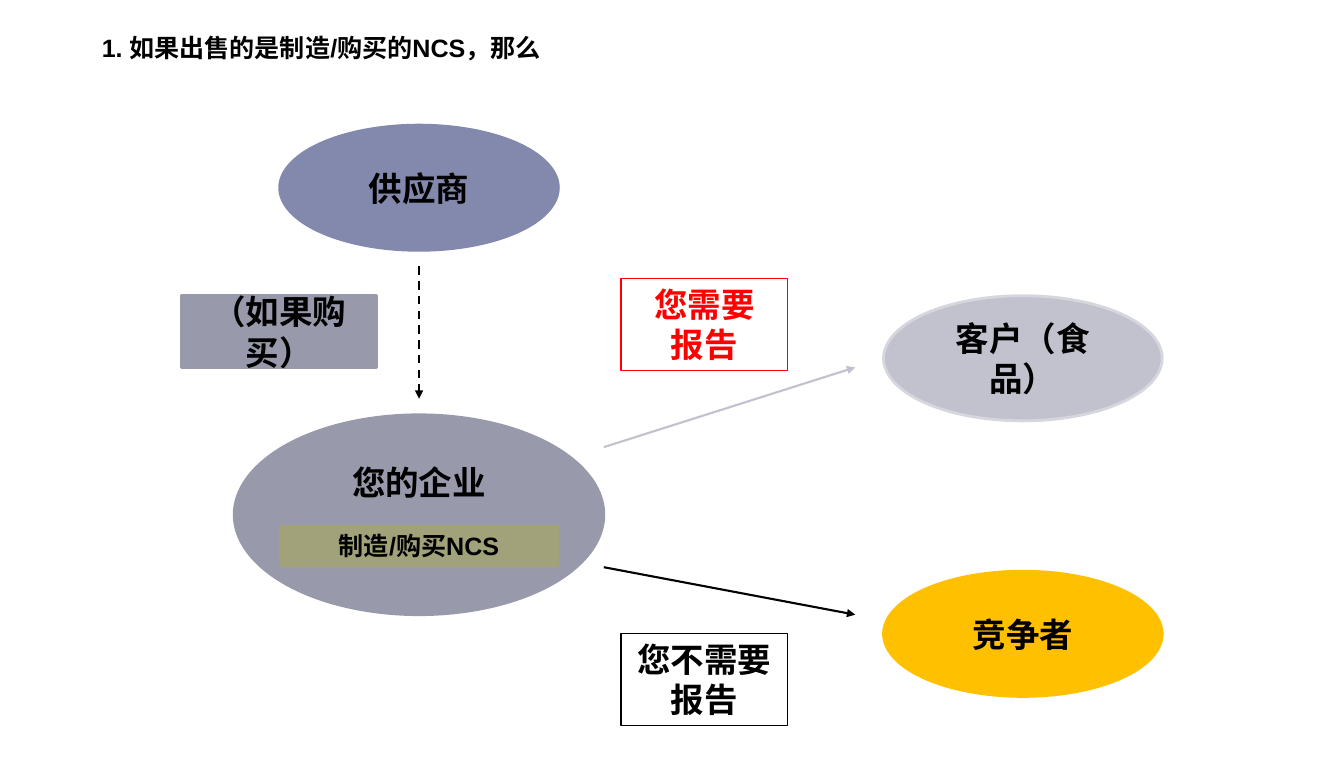
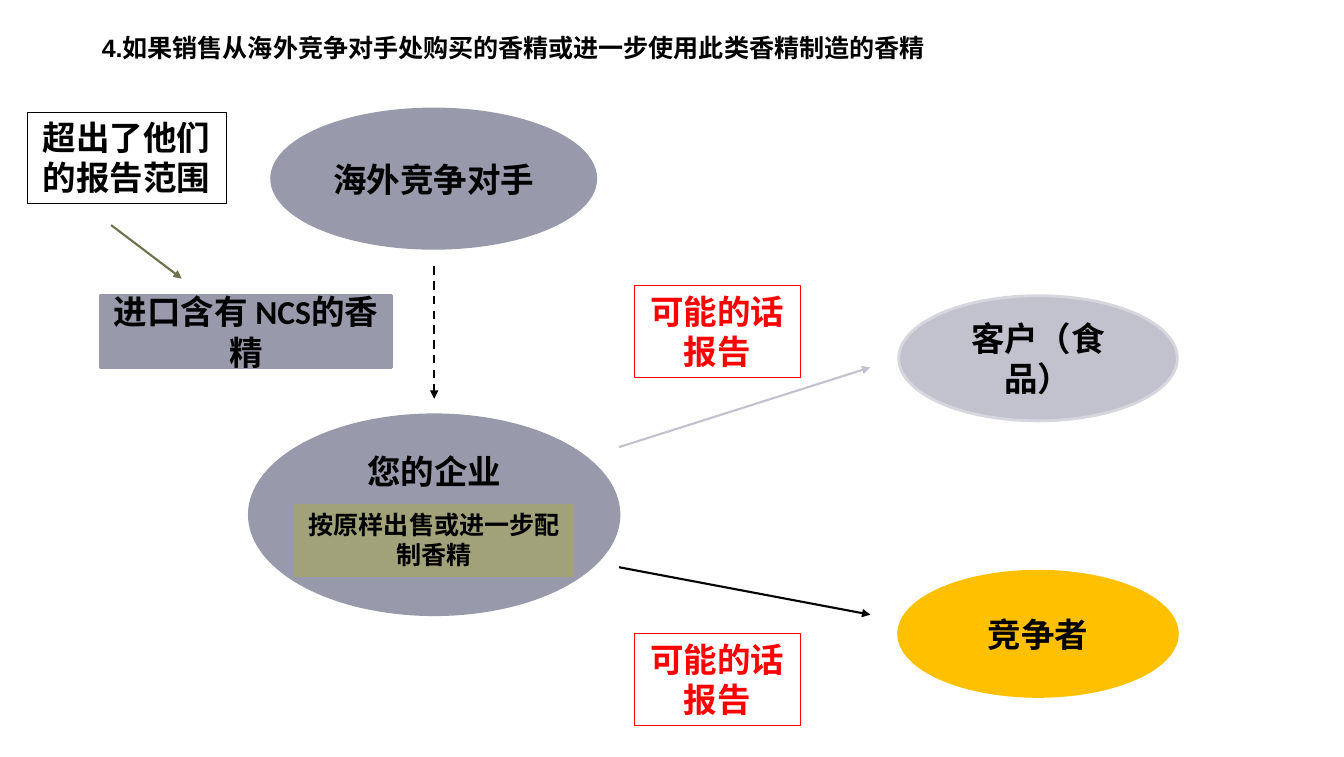
"""Build two flow diagrams showing when sales of NCS flavourings must be reported."""
from pptx import Presentation
from pptx.dml.color import RGBColor
from pptx.enum.dml import MSO_LINE
from pptx.enum.shapes import MSO_CONNECTOR, MSO_SHAPE
from pptx.enum.text import MSO_ANCHOR, PP_ALIGN
from pptx.oxml.ns import qn
from pptx.util import Inches, Pt

ELLIPSE, RECT = MSO_SHAPE.OVAL, MSO_SHAPE.RECTANGLE
STRAIGHT, DASH = MSO_CONNECTOR.STRAIGHT, MSO_LINE.DASH
LEFT, CENTER = PP_ALIGN.LEFT, PP_ALIGN.CENTER
TOP, MIDDLE = MSO_ANCHOR.TOP, MSO_ANCHOR.MIDDLE
BLACK, RED, GOLD = "000000", "FF0000", "FFC000"
BLUE, GREY, PALE, PALE_EDGE = "8389AD", "989AAC", "C1C2CD", "D6D7DE"
OLIVE, DARK_OLIVE = "A1A17A", "6F6F4E"
SMALL, LARGE = 17.9, 23.9


def add_text(s, text, at, shape=None, fill=None, line=None, width=2, size=LARGE,
             color=BLACK, font="Arial", align=CENTER, anchor=MIDDLE):
    """Add a text box, or a preset shape with text."""
    box = [Inches(v) for v in at]
    if shape is None:
        sp = s.shapes.add_textbox(*box)
    else:
        sp = s.shapes.add_shape(shape, *box)
        sp.shadow.inherit = False
        if fill:
            sp.fill.solid()
            sp.fill.fore_color.rgb = RGBColor.from_string(fill)
        else:
            sp.fill.background()
        sp.line.color.rgb = RGBColor.from_string(line or fill)
        sp.line.width = Pt(width)
    tf = sp.text_frame
    tf.word_wrap = True
    tf.vertical_anchor = anchor
    tf.text = text
    for p in tf.paragraphs:
        p.alignment = align
        p.font.name, p.font.size, p.font.bold = font, Pt(size), True
        p.font.color.rgb = RGBColor.from_string(color)


def add_arrow(s, start, end, color=BLACK, dash=None):
    """Add a straight line with a triangle head at its end."""
    line = s.shapes.add_connector(STRAIGHT, *[Inches(v) for v in (*start, *end)])
    line.line.color.rgb = RGBColor.from_string(color)
    line.line.width = Pt(1.5)
    if dash:
        line.line.dash_style = dash
    ln = line.line._get_or_add_ln()
    ln.append(ln.makeelement(qn("a:tailEnd"), {"type": "triangle"}))
    spPr = line._element.spPr
    spPr.append(spPr.makeelement(qn("a:effectLst"), {}))


slides = [
    dict(title="1. 如果出售的是制造/购买的NCS，那么", dx=0,
         source=("供应商", (2.77, 1.24, 2.76, 1.24), BLUE),
         supply=("（如果购买）", (1.8, 2.93, 1.93, 0.71)),
         activity=("制造/购买NCS", 5.21, 0.4), name_top=4.53,
         labels=[("您需要\n报告", 6.15, 2.76, RED), ("您不需要\n报告", 6.15, 6.28, BLACK)]),
    dict(title="4.如果销售从海外竞争对手处购买的香精或进一步使用此类香精制造的香精", dx=0.15,
         source=("海外竞争对手", (2.69, 1.08, 3.21, 1.38), GREY),
         supply=("进口含有 NCS的香精", (0.99, 2.93, 2.89, 0.71)),
         activity=("按原样出售或进一步配制香精", 5, 0.71), name_top=4.42,
         labels=[("可能的话报告", 6.28, 2.83, RED), ("可能的话报告", 6.28, 6.28, RED)]),
]

prs = Presentation()
prs.slide_width, prs.slide_height = Inches(13.31), Inches(7.5)
for d in slides:
    s = prs.slides.add_slide(prs.slide_layouts[6])
    dx = d["dx"]
    add_text(s, d["title"], (0.91, 0.27, 11.48, 0.82), size=SMALL, align=LEFT, anchor=TOP)

    text, at, fill = d["source"]
    add_text(s, text, at, ELLIPSE, fill)
    add_text(s, "", (2.32 + dx, 4.11, 3.66, 1.98), ELLIPSE, GREY)
    add_arrow(s, (4.15 + dx, 2.64), (4.15 + dx, 3.95), dash=DASH)
    text, at = d["supply"]
    add_text(s, text, at, RECT, GREY, font="Calibri")

    text, top, height = d["activity"]
    add_text(s, text, (2.77 + dx, top, 2.76, height), RECT, OLIVE, width=0.75,
             size=SMALL, anchor=TOP)
    add_text(s, "您的企业", (2.77 + dx, d["name_top"], 2.76, 0.5), anchor=TOP)

    for text, top, fill, edge, y1, y2, color in [
            ("客户（食品）", 2.93, PALE, PALE_EDGE, 4.43, 3.64, PALE),
            ("竞争者", 5.66, GOLD, GOLD, 5.62, 6.09, BLACK)]:
        add_arrow(s, (5.98 + dx, y1), (8.47 + dx, y2), color)
        add_text(s, text, (8.75 + dx, top, 2.76, 1.24), ELLIPSE, fill, edge)

    for text, left, top, color in d["labels"]:
        add_text(s, text, (left, top, 1.65, 0.91), RECT, line=color, width=0.75,
                 color=color, anchor=TOP)

add_text(s, "超出了他们的报告范围", (0.27, 1.11, 1.97, 0.91), RECT, line=BLACK,
         width=0.75, anchor=TOP)
add_arrow(s, (1.1, 2.23), (1.8, 2.76), DARK_OLIVE)

prs.save("out.pptx")
